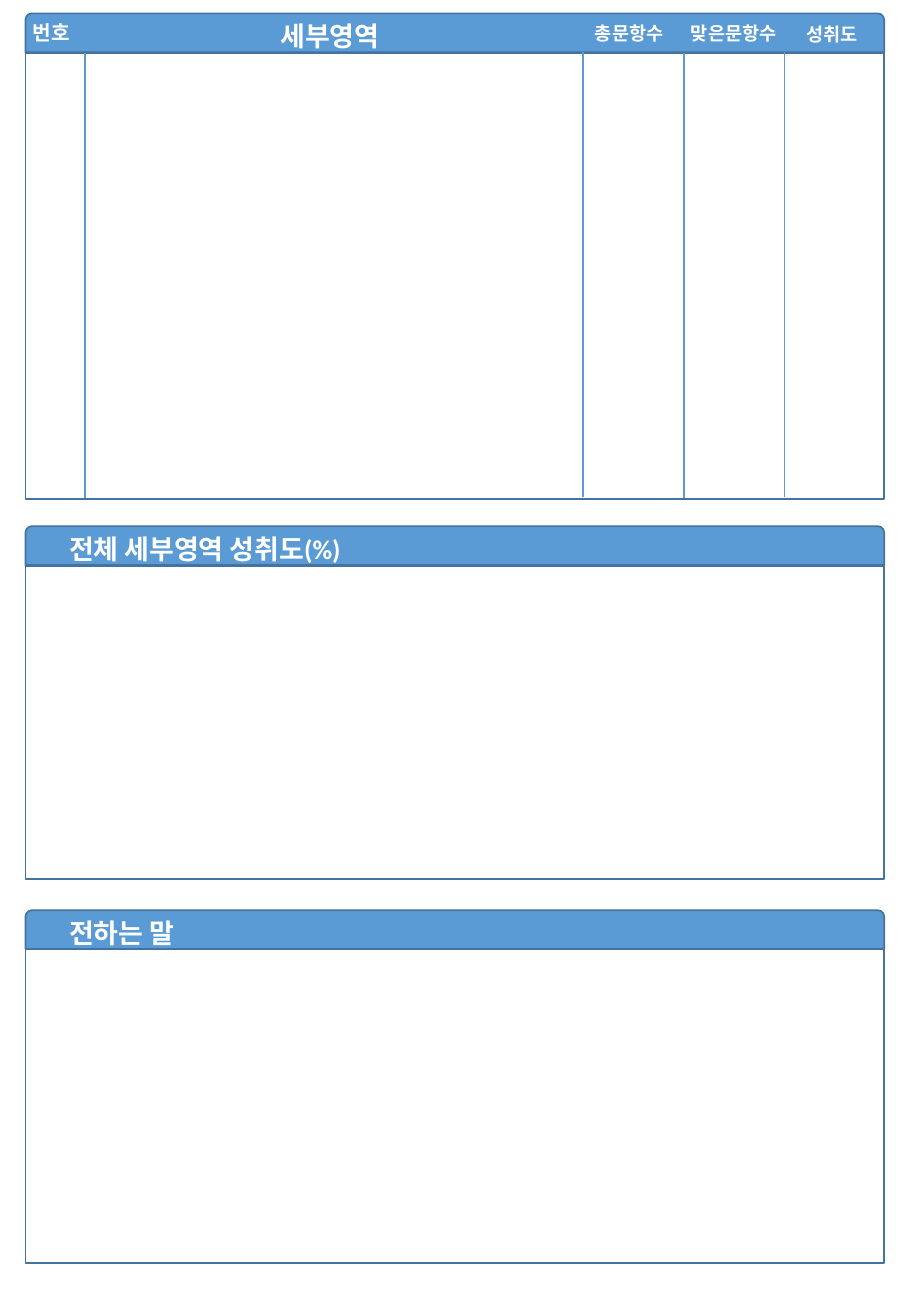
from lxml import etree
from pptx import Presentation
from pptx.dml.color import RGBColor
from pptx.enum.shapes import MSO_CONNECTOR, MSO_SHAPE
from pptx.enum.text import MSO_AUTO_SIZE
from pptx.oxml.ns import qn
from pptx.util import Inches, Pt

RECTANGLE = MSO_SHAPE.RECTANGLE
ROUNDED_TOP = MSO_SHAPE.ROUND_2_SAME_RECTANGLE
STRAIGHT = MSO_CONNECTOR.STRAIGHT
FIT_SHAPE = MSO_AUTO_SIZE.SHAPE_TO_FIT_TEXT

BLUE = RGBColor(0x5B, 0x9B, 0xD5)
DARK_BLUE = RGBColor(0x43, 0x73, 0x9E)
WHITE = RGBColor(0xFF, 0xFF, 0xFF)

PANEL_LEFT, PANEL_WIDTH, HEADER_HEIGHT = 0.21, 7.07, 0.32
TABLE_TOP, TABLE_BODY = 0.11, 3.67
NOTE_BODY = 2.58


class ReportPage:
    font_name = "Calibri"
    line_width = Pt(1)

    def __init__(self, deck):
        self.slide = deck.slides.add_slide(deck.slide_layouts[6])

    def box(self, kind, top, height, fill=None):
        box = self.slide.shapes.add_shape(
            kind, Inches(PANEL_LEFT), Inches(top), Inches(PANEL_WIDTH), Inches(height))
        box.shadow.inherit = False
        if fill is None:
            box.fill.background()
        else:
            box.fill.solid()
            box.fill.fore_color.rgb = fill
        box.line.color.rgb = DARK_BLUE
        box.line.width = self.line_width

    def panel(self, top, body_height):
        """Draw a blue header bar with an open frame below it."""
        self.box(RECTANGLE, top + HEADER_HEIGHT + 0.005, body_height)
        self.box(ROUNDED_TOP, top, HEADER_HEIGHT, BLUE)

    def label(self, text, left, top, width, height, size):
        box = self.slide.shapes.add_textbox(
            Inches(left), Inches(top), Inches(width), Inches(height))
        frame = box.text_frame
        frame.word_wrap = False
        frame.auto_size = FIT_SHAPE
        para = frame.paragraphs[0]
        para.text = text
        para.font.name = self.font_name
        para.font.size = Pt(size)
        para.font.bold = True
        para.font.color.rgb = WHITE

    def divider(self, x, top, bottom):
        line = self.slide.shapes.add_connector(
            STRAIGHT, Inches(x), Inches(top), Inches(x), Inches(bottom))
        line.line.color.rgb = BLUE
        line.line.width = self.line_width
        etree.SubElement(line._element.spPr, qn("a:effectLst"))


def main():
    deck = Presentation()
    deck.slide_width, deck.slide_height = Inches(7.5), Inches(10.83)
    page = ReportPage(deck)

    page.panel(TABLE_TOP, TABLE_BODY)
    for text, left, top, width, height, size in (
        ("번호", 0.17, 0.12, 0.54, 0.3, 12),
        ("세부영역", 2.21, 0.11, 1.1, 0.37, 16),
        ("총문항수", 4.8, 0.13, 0.82, 0.29, 11),
        ("맞은문항수", 5.59, 0.13, 0.97, 0.29, 11),
        ("성취도", 6.54, 0.14, 0.66, 0.29, 11),
    ):
        page.label(text, left, top, width, height, size)
    for x, top in ((0.7, 0.44), (4.8, 0.43), (5.63, 0.44), (6.46, 0.43)):
        page.divider(x, top, top + 3.66)

    for heading, top, width in (
        ("전체 세부영역 성취도(%)", 4.33, 2.63),
        ("전하는 말", 7.49, 1.15),
    ):
        page.panel(top, NOTE_BODY)
        page.label(heading, 0.47, top, width, 0.37, 16)

    deck.save("out.pptx")


if __name__ == "__main__":
    main()
